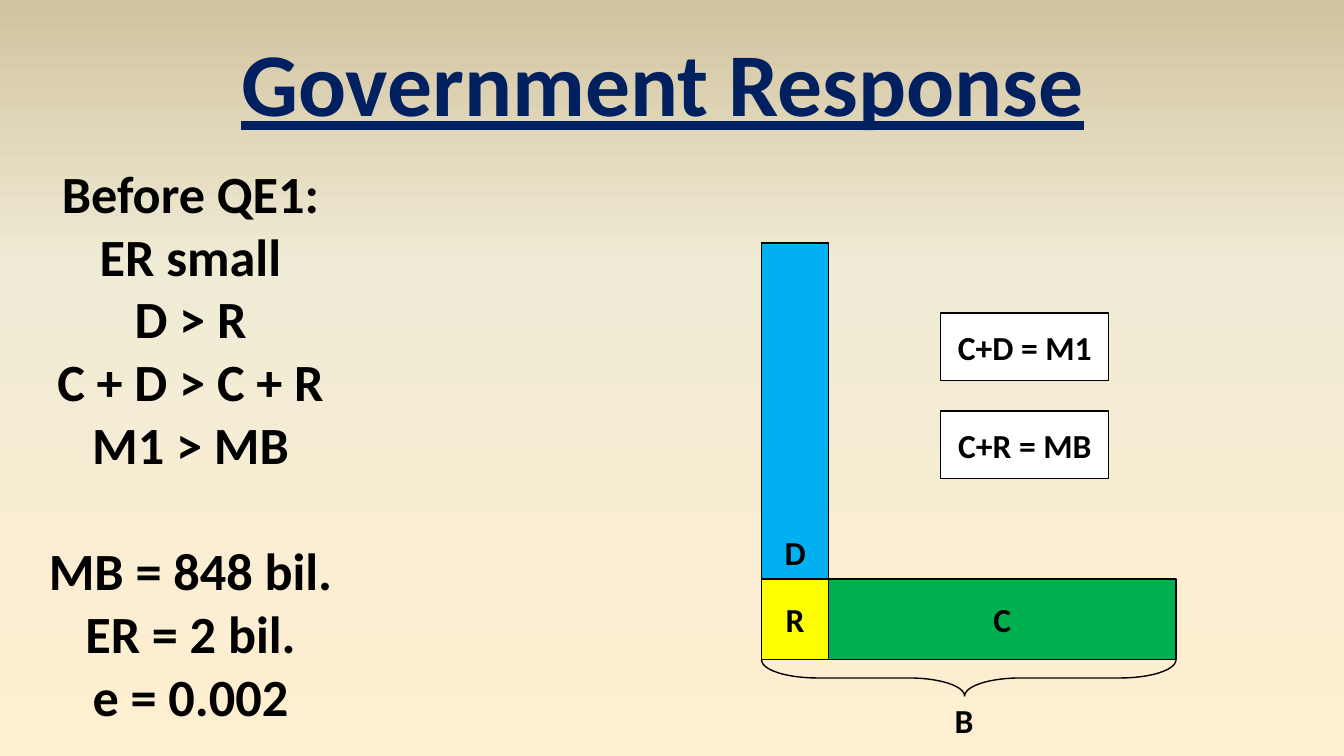
from copy import deepcopy

from pptx import Presentation
from pptx.dml.color import RGBColor
from pptx.enum import shapes, text
from pptx.util import Pt

TITLE = "Government Response"
BEFORE_QE1 = [
    ["Before QE1:", "ER small", "D > R", "C + D > C + R", "M1 > MB"],
    ["MB = 848 bil.", "ER = 2 bil.", "e = 0.002"],
]
IDENTITIES = ["C+D = M1", "C+R = MB"]
BASE_LABEL = "B"

THEME = {
    "font": "Calibri",
    "title": "002060", "ink": "000000",
    "deposits": "00B0F0", "reserves": "FFFF00", "currency": "00B050", "identity": "FFFFFF",
    "backdrop": [(0, "FFEFD1"), (0.65, "F0EBD5"), (1, "D1C39F")],
    "title_size": 48, "list_size": 28, "label_size": 18, "line": 0.75,
}

# Diagram: deposits stand on reserves, currency lies to the right of reserves
CORNER_X, CORNER_Y = 408, 310.3
RESERVES_W, BASE_H = 36, 43.2
DEPOSITS_H, CURRENCY_W = 180, 186
BRACE_DEPTH = 19.4
IDENTITY_X, IDENTITY_Y, IDENTITY_W, IDENTITY_H, IDENTITY_PITCH = 504, 167.8, 90, 36, 52.5


def color(key):
    return RGBColor.from_string(THEME[key])


def style(paragraph, size, ink="ink", underline=None):
    paragraph.alignment = text.PP_ALIGN.CENTER
    for run in paragraph.runs:
        run.font.name = THEME["font"]
        run.font.size = Pt(THEME[size])
        run.font.bold = True
        run.font.underline = underline
        run.font.color.rgb = color(ink)


def outline(shape):
    shape.shadow.inherit = False
    shape.line.color.rgb = color("ink")
    shape.line.width = Pt(THEME["line"])


def add_block(slide, label, fill, left, top, width, height, anchor=text.MSO_ANCHOR.MIDDLE):
    block = slide.shapes.add_shape(
        shapes.MSO_SHAPE.RECTANGLE, Pt(left), Pt(top), Pt(width), Pt(height))
    outline(block)
    block.fill.solid()
    block.fill.fore_color.rgb = color(fill)
    frame = block.text_frame
    frame.text = label
    frame.word_wrap = False
    frame.vertical_anchor = anchor
    style(frame.paragraphs[0], "label_size")


def add_text(slide, lines, size, left, top, width, height, wrap=False, **look):
    box = slide.shapes.add_textbox(Pt(left), Pt(top), Pt(width), Pt(height))
    frame = box.text_frame
    frame.text = "\n".join(lines)
    frame.word_wrap = wrap
    frame.auto_size = text.MSO_AUTO_SIZE.SHAPE_TO_FIT_TEXT
    for paragraph in frame.paragraphs:
        style(paragraph, size, **look)
    return frame


def add_brace(slide, left, top, width, depth):
    """Draw a brace that opens upward, as a left brace turned about its centre."""
    brace = slide.shapes.add_shape(
        shapes.MSO_SHAPE.LEFT_BRACE,
        Pt(left + (width - depth) / 2), Pt(top + (depth - width) / 2), Pt(depth), Pt(width))
    brace.rotation = 270
    brace.adjustments[0] = 1.54
    brace.adjustments[1] = 0.49
    brace.fill.background()
    outline(brace)


def paint_backdrop(slide):
    fill = slide.background.fill
    fill.gradient()
    fill.gradient_angle = 90
    first_stop = slide.element.xpath(".//a:gs")[0]
    first_stop.addnext(deepcopy(first_stop))
    for stop, (position, rgb) in zip(fill.gradient_stops, THEME["backdrop"]):
        stop.position = position
        stop.color.rgb = RGBColor.from_string(rgb)


def main():
    deck = Presentation()
    deck.slide_width, deck.slide_height = Pt(720), Pt(405)
    slide = deck.slides.add_slide(deck.slide_layouts[6])
    paint_backdrop(slide)

    add_text(slide, [TITLE], "title_size", 120, 10.8, 470, 65.5, ink="title", underline=True)

    facts = add_text(slide, sum(BEFORE_QE1, []), "list_size", 6, 82.8, 192, 312.5, wrap=True)
    facts.paragraphs[len(BEFORE_QE1[0])].space_before = Pt(34)

    add_block(slide, "R", "reserves", CORNER_X, CORNER_Y, RESERVES_W, BASE_H)
    add_block(slide, "D", "deposits", CORNER_X, CORNER_Y - DEPOSITS_H, RESERVES_W, DEPOSITS_H,
              text.MSO_ANCHOR.BOTTOM)
    add_block(slide, "C", "currency", CORNER_X + RESERVES_W, CORNER_Y, CURRENCY_W, BASE_H)
    add_brace(slide, CORNER_X, CORNER_Y + BASE_H, RESERVES_W + CURRENCY_W, BRACE_DEPTH)
    add_text(slide, [BASE_LABEL], "label_size", 504, 371.5, 25, 29)

    for row, identity in enumerate(IDENTITIES):
        add_block(slide, identity, "identity", IDENTITY_X, IDENTITY_Y + row * IDENTITY_PITCH,
                  IDENTITY_W, IDENTITY_H)

    deck.save("out.pptx")


if __name__ == "__main__":
    main()
